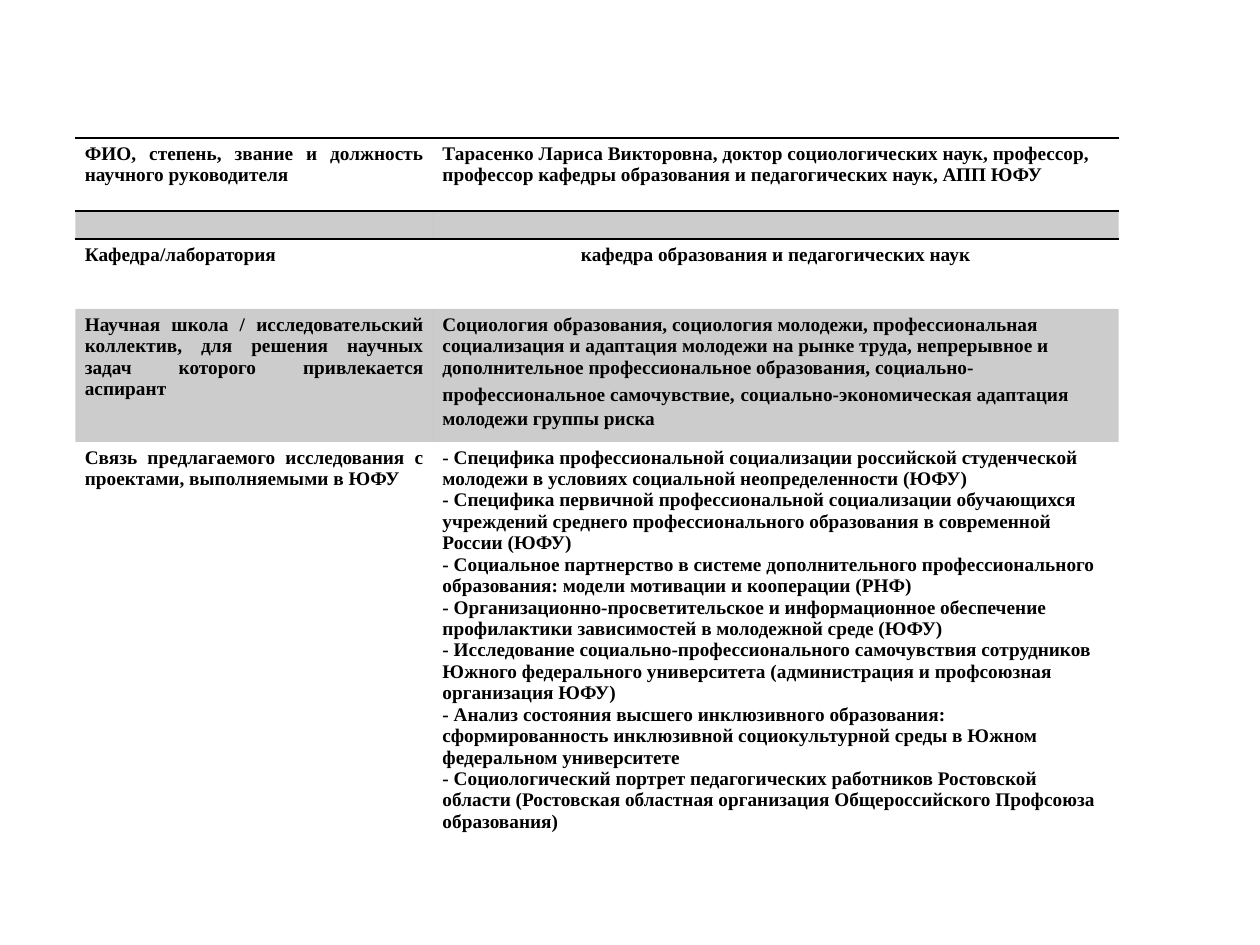
from lxml.etree import SubElement
from pptx import Presentation
from pptx.dml.color import RGBColor
from pptx.enum.text import MSO_ANCHOR, PP_ALIGN
from pptx.oxml.ns import qn
from pptx.util import Cm, Pt

BLACK = RGBColor(0, 0, 0)
COLUMN_WIDTHS = [7.21, 13.82]
ROW_HEIGHTS = [1.47, 0.57, 1.41, 2.68, 8.76]
SHADED_ROWS = (1, 3)
NO_STYLE_TABLE = "{2D5ABB26-0587-4C30-8999-92F81FD0307C}"

LEFT, CENTER, JUSTIFY = PP_ALIGN.LEFT, PP_ALIGN.CENTER, PP_ALIGN.JUSTIFY

# Each row: label, value lines, value alignment
ROWS = [
    ("ФИО, степень, звание и должность научного руководителя",
     ["Тарасенко Лариса Викторовна, доктор социологических наук, профессор, "
      "профессор кафедры образования и педагогических наук, АПП ЮФУ"], LEFT),
    ("", [""], LEFT),
    ("Кафедра/лаборатория", ["кафедра образования и педагогических наук"], CENTER),
    ("Научная школа / исследовательский коллектив, для решения научных задач "
     "которого привлекается аспирант",
     ["Социология образования, социология молодежи, профессиональная социализация "
      "и адаптация молодежи на рынке труда, непрерывное и дополнительное "
      "профессиональное образования, социально-профессиональное самочувствие,"], LEFT),
    ("Связь предлагаемого исследования с проектами, выполняемыми в ЮФУ",
     ["- Специфика профессиональной социализации российской студенческой молодежи "
      "в условиях социальной неопределенности (ЮФУ)",
      "- Специфика первичной профессиональной социализации обучающихся учреждений "
      "среднего профессионального образования в современной России (ЮФУ)",
      "- Социальное партнерство в системе дополнительного профессионального "
      "образования: модели мотивации и кооперации (РНФ)",
      "- Организационно-просветительское и информационное обеспечение профилактики "
      "зависимостей в молодежной среде (ЮФУ)",
      "- Исследование социально-профессионального самочувствия сотрудников Южного "
      "федерального университета (администрация и профсоюзная организация ЮФУ)",
      "- Анализ состояния высшего инклюзивного образования: сформированность "
      "инклюзивной социокультурной среды в Южном федеральном университете",
      "- Социологический портрет педагогических работников Ростовской области "
      "(Ростовская областная организация Общероссийского Профсоюза образования)"], LEFT),
]
SCHOOL_ROW = 3
SCHOOL_ENDING = "социально-экономическая адаптация молодежи группы риска"


class SlideWriter:
    font_name = "Times New Roman"
    font_size = 11

    def __init__(self, page):
        self.page = page

    def style_span(self, span, name=font_name, size=font_size, bold=True):
        span.font.name = name
        span.font.size = Pt(size)
        span.font.bold = bold
        span.font.color.rgb = BLACK

    def add_span(self, para, text, **style):
        span = para.add_run()
        span.text = text
        self.style_span(span, **style)

    def table(self, left, top, widths, heights):
        frame = self.page.shapes.add_table(
            len(heights), len(widths), Cm(left), Cm(top), Cm(sum(widths)), Cm(sum(heights)))
        table = frame.table
        table.first_row = table.horz_banding = False
        table._tbl.tblPr.find(qn("a:tableStyleId")).text = NO_STYLE_TABLE
        for column, width in zip(table.columns, widths):
            column.width = Cm(width)
        for row, height in zip(table.rows, heights):
            row.height = Cm(height)
        return table

    def fill_cell(self, cell, lines, alignment):
        cell.margin_left = cell.margin_right = Cm(0.19)
        cell.margin_top = cell.margin_bottom = Cm(0.1)
        cell.vertical_anchor = MSO_ANCHOR.TOP
        cell.text_frame.text = "\n".join(lines)
        for para in cell.text_frame.paragraphs:
            para.alignment = alignment
            for span in para.runs:
                self.style_span(span)
            if not para.runs:
                # A small end mark keeps the empty row thin
                SubElement(para._p, qn("a:endParaRPr"), sz="800")

    def border(self, cell, *sides):
        for side in sides:
            line = SubElement(cell._tc.get_or_add_tcPr(), qn(f"a:ln{side}"), w=str(Pt(1)))
            paint = SubElement(line, qn("a:solidFill"))
            SubElement(paint, qn("a:srgbClr"), val=str(BLACK))

    def shade(self, cell):
        """Fill the cell with black at 20 % opacity."""
        cell.fill.solid()
        cell.fill.fore_color.rgb = BLACK
        color = cell._tc.tcPr.find(qn("a:solidFill")).find(qn("a:srgbClr"))
        SubElement(color, qn("a:alpha"), val="20000")


def main():
    deck = Presentation()
    deck.slide_width, deck.slide_height = Cm(25.4), Cm(19.05)
    writer = SlideWriter(deck.slides.add_slide(deck.slide_layouts[6]))
    table = writer.table(1.52, 2.78, COLUMN_WIDTHS, ROW_HEIGHTS)

    for index, (label, lines, alignment) in enumerate(ROWS):
        label_cell, value_cell = table.cell(index, 0), table.cell(index, 1)
        writer.fill_cell(label_cell, [label], JUSTIFY)
        writer.fill_cell(value_cell, lines, alignment)
        for cell in (label_cell, value_cell):
            if index == 0:
                writer.border(cell, "T", "B")
            elif index == 1:
                writer.border(cell, "T")
            if index in SHADED_ROWS:
                writer.shade(cell)
            else:
                cell.fill.background()

    school = table.cell(SCHOOL_ROW, 1).text_frame.paragraphs[0]
    writer.add_span(school, " ", name="Calibri", size=14, bold=False)
    writer.add_span(school, SCHOOL_ENDING)
    deck.save("out.pptx")


if __name__ == "__main__":
    main()
